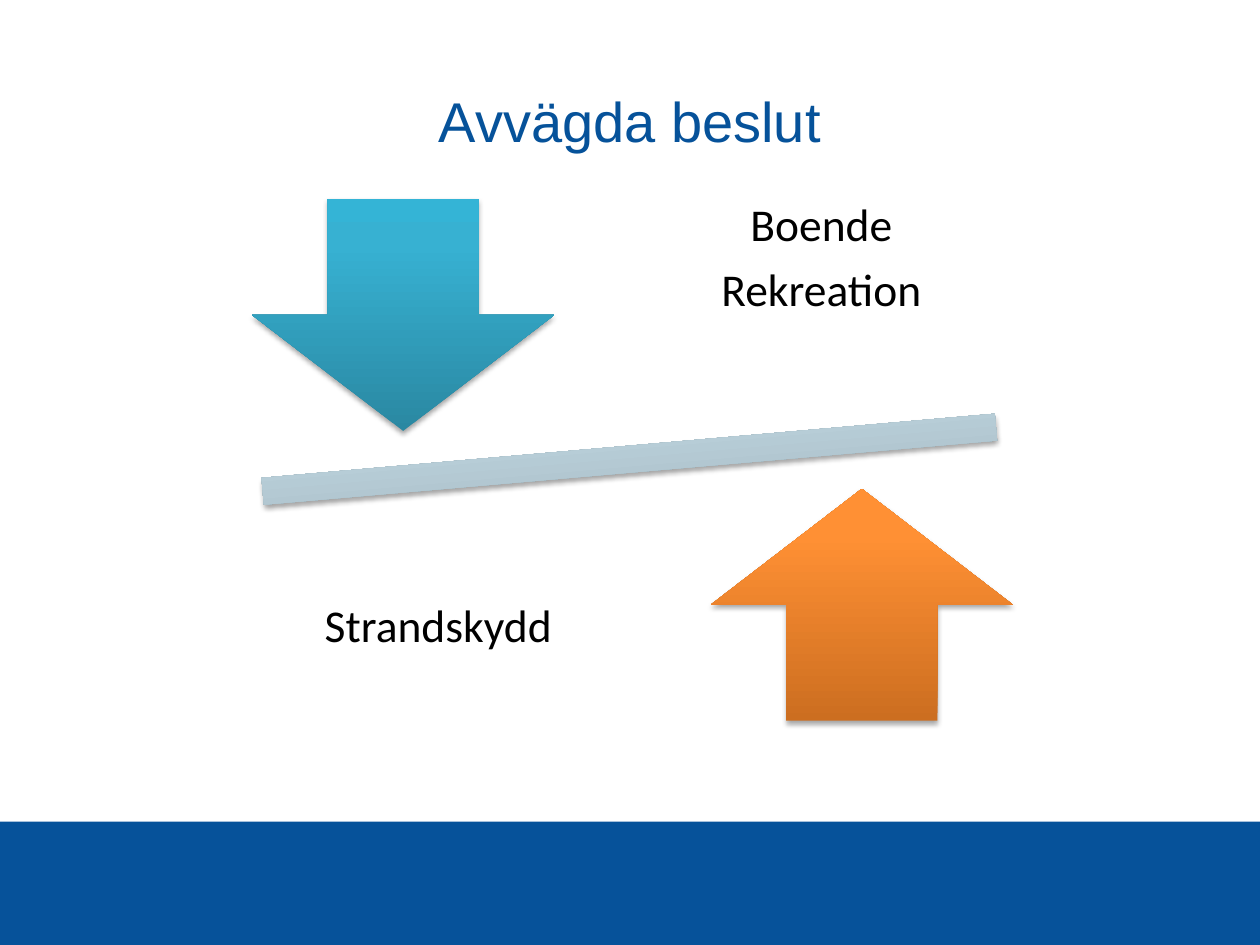
from copy import deepcopy

from pptx import Presentation
from pptx.dml.color import RGBColor
from pptx.enum import shapes, text
from pptx.oxml import parse_xml
from pptx.oxml.ns import nsdecls, qn
from pptx.util import Inches, Pt

BLUE = RGBColor(0x06, 0x52, 0x9A)
BLACK = RGBColor(0, 0, 0)
WHITE = RGBColor(255, 255, 255)
GREY_STOPS = ((0, "98AAB2"), (0.8, "C5DDE7"), (1, "C6DEE9"))
TEAL_STOPS = ((0, "2A88A2"), (0.8, "37B1D2"), (1, "34B4D6"))
ORANGE_STOPS = ((0, "CC6E20"), (0.8, "FF9034"), (1, "FF9136"))

TITLE = "Avvägda beslut"
TITLE_BOX = (1, 0.55, 8, 0.8)
FOOTER_BOX = (0, 6.52, 10, 0.98)
PRESET = shapes.MSO_SHAPE
# preset, box, rotation, gradient stops
BALANCE = [
    (PRESET.MATH_MINUS, (1.02, 3.19, 7.95, 0.91), -5, GREY_STOPS),
    (PRESET.DOWN_ARROW, (2, 1.58, 2.4, 1.84), 0, TEAL_STOPS),
    (PRESET.UP_ARROW, (5.64, 3.88, 2.4, 1.84), 0, ORANGE_STOPS),
]
# lines, box, bottom inset
LABELS = [
    (["Boende", "Rekreation"], (5.24, 1.35, 2.56, 1.93), 0.72),
    (["Strandskydd"], (2.2, 4.02, 2.56, 1.93), 0.2),
]
INSET = 0.2
LABEL_SIZE = 26
SHADOW = (
    f'<a:outerShdw {nsdecls("a")} blurRad="{Pt(3.1)}" dist="{Pt(1.8)}" '
    'dir="5400000" rotWithShape="0"><a:srgbClr val="000000">'
    '<a:alpha val="35000"/></a:srgbClr></a:outerShdw>'
)


def inches(box):
    return [Inches(length) for length in box]


def write(frame, lines, *, size, font, color, line_spacing=None, space_after=None):
    frame.word_wrap = True
    frame.vertical_anchor = text.MSO_ANCHOR.MIDDLE
    for index, line in enumerate(lines):
        paragraph = frame.add_paragraph() if index else frame.paragraphs[0]
        paragraph.alignment = text.PP_ALIGN.CENTER
        paragraph.line_spacing = line_spacing
        paragraph.space_after = space_after
        run = paragraph.add_run()
        run.text = line
        run.font.size = Pt(size)
        run.font.name = font
        run.font.color.rgb = color


def add_plain_shape(slide, preset, box):
    shape = slide.shapes.add_shape(preset, *inches(box))
    shape.line.fill.background()
    shape.shadow.inherit = False
    return shape


def fill_gradient(shape, stops):
    """Fill from bottom to top, with any number of stops from two up."""
    shape.fill.gradient()
    shape.fill.gradient_angle = 90
    stop_list = shape._element.spPr.find(".//" + qn("a:gsLst"))
    while len(stop_list) < len(stops):
        stop_list.append(deepcopy(stop_list[-1]))
    for stop, (position, color) in zip(shape.fill.gradient_stops, stops):
        stop.position = position
        stop.color.rgb = RGBColor.from_string(color)


def main():
    deck = Presentation()
    deck.slide_width, deck.slide_height = Inches(10), Inches(7.5)
    slide = deck.slides.add_slide(deck.slide_layouts[5])
    slide.background.fill.solid()
    slide.background.fill.fore_color.rgb = WHITE

    footer = add_plain_shape(slide, PRESET.RECTANGLE, FOOTER_BOX)
    footer.fill.solid()
    footer.fill.fore_color.rgb = BLUE

    title = slide.shapes.title
    title.left, title.top, title.width, title.height = inches(TITLE_BOX)
    write(title.text_frame, [TITLE], size=32, font="Arial", color=BLUE)

    for preset, box, rotation, stops in BALANCE:
        part = add_plain_shape(slide, preset, box)
        part.rotation = rotation
        fill_gradient(part, stops)
        effects = part._element.spPr.find(qn("a:effectLst"))
        effects.append(parse_xml(SHADOW))

    for lines, box, bottom_inset in LABELS:
        frame = slide.shapes.add_textbox(*inches(box)).text_frame
        frame.margin_left = frame.margin_right = frame.margin_top = Inches(INSET)
        frame.margin_bottom = Inches(bottom_inset)
        write(frame, lines, size=LABEL_SIZE, font="Calibri", color=BLACK,
              line_spacing=0.9, space_after=Pt(0.35 * LABEL_SIZE))

    deck.save("out.pptx")


if __name__ == "__main__":
    main()
